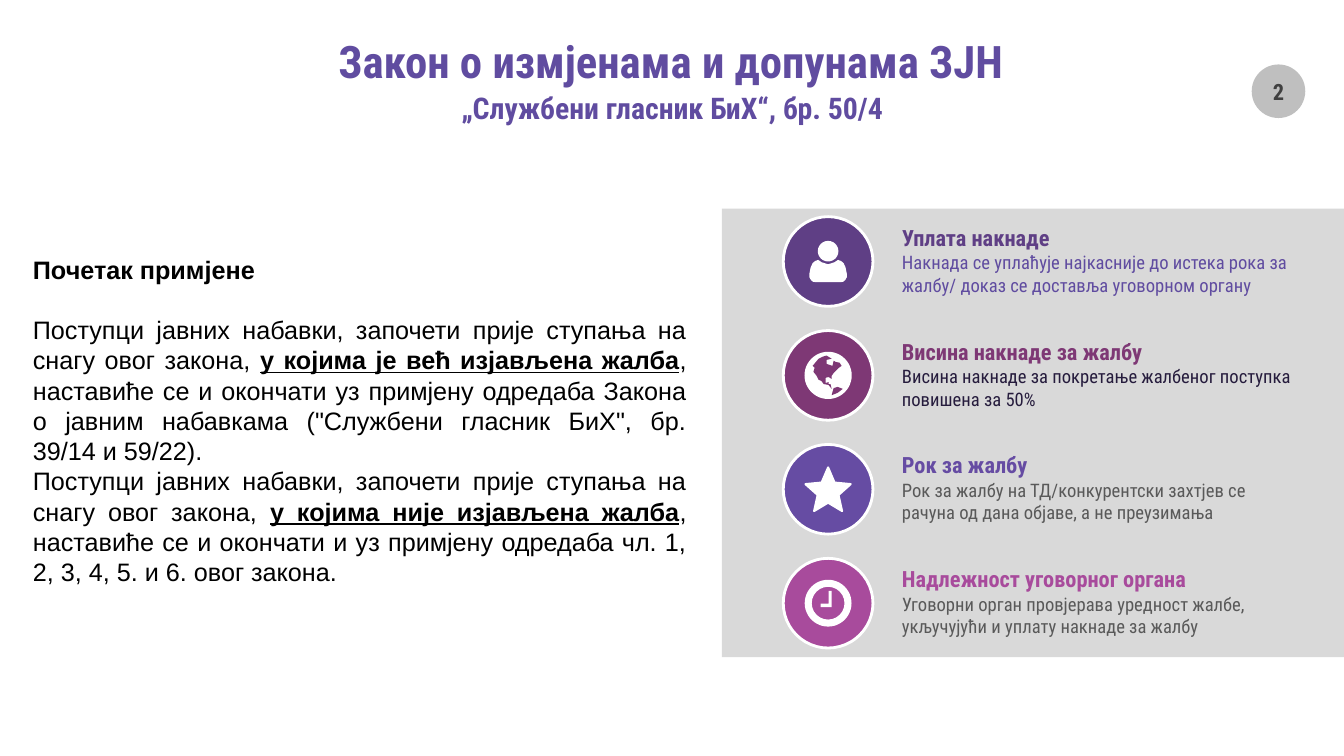
from pptx import Presentation
from pptx.dml.color import RGBColor
from pptx.enum.shapes import MSO_SHAPE
from pptx.enum.text import MSO_ANCHOR, MSO_AUTO_SIZE, PP_ALIGN
from pptx.util import Cm, Pt

HEAD = "Roboto Condensed"
BODY = "Arial"
WHITE = "FFFFFF"
VIOLET = "604CA0"


def color(code):
    return RGBColor.from_string(code)


class Deck:
    """Holds the style and the current slide."""

    def __init__(self):
        self.file = Presentation()
        self.file.slide_width, self.file.slide_height = Cm(33.87), Cm(19.05)
        self.slide = self.file.slides.add_slide(self.file.slide_layouts[5])

    def paint(self, shape, fill, line=None, width=2):
        shape.shadow.inherit = False
        shape.fill.solid()
        shape.fill.fore_color.rgb = color(fill)
        if line:
            shape.line.color.rgb = color(line)
            shape.line.width = Pt(width)
        else:
            shape.line.fill.background()
        return shape

    def form(self, kind, box, fill, line=None, width=2):
        shape = self.slide.shapes.add_shape(kind, *map(Cm, box))
        return self.paint(shape, fill, line, width)

    def round(self, x, y, size, fill, line=None):
        """Circle about a centre."""
        box = (x - size / 2, y - size / 2, size, size)
        return self.form(MSO_SHAPE.OVAL, box, fill, line)

    def outline(self, x, y, points, fill):
        """Polygon about a centre, in hundredths of a centimetre."""
        pen = self.slide.shapes.build_freeform(*points[0], scale=Cm(0.01))
        pen.add_line_segments(points[1:], close=True)
        return self.paint(pen.convert_to_shape(Cm(x), Cm(y)), fill)

    def frame(self, shape, pad=(0, 0), anchor=MSO_ANCHOR.MIDDLE, wrap=True):
        frame = shape.text_frame
        frame.word_wrap = wrap
        frame.auto_size = MSO_AUTO_SIZE.NONE
        frame.vertical_anchor = anchor
        frame.margin_left = frame.margin_right = Cm(pad[0])
        frame.margin_top = frame.margin_bottom = Cm(pad[1])
        return frame

    def run(self, para, text, size, tint, bold=False, font=HEAD, under=False):
        run = para.add_run()
        run.text = text
        run.font.size, run.font.name = Pt(size), font
        run.font.bold, run.font.underline = bold, under
        run.font.color.rgb = color(tint)

    def label(self, shape, text, size, tint, wrap=True):
        """Bold centred text inside a shape."""
        para = self.frame(shape, wrap=wrap).paragraphs[0]
        para.alignment = PP_ALIGN.CENTER
        self.run(para, text, size, tint, True)

    def title(self, box, text):
        shape = self.slide.shapes.title
        shape.left, shape.top, shape.width, shape.height = map(Cm, box)
        self.label(shape, text, 32, VIOLET, wrap=False)

    def box(self, box):
        return self.slide.shapes.add_textbox(*map(Cm, box))

    def note(self, box, text, size, tint, bold=False):
        frame = self.frame(self.box(box), (0.25, 0.13), MSO_ANCHOR.TOP)
        self.run(frame.paragraphs[0], text, size, tint, bold)

    def story(self, box, head, paras):
        frame = self.frame(self.box(box), (0.25, 0.13), MSO_ANCHOR.TOP)
        first = frame.paragraphs[0]
        first.line_spacing = first.space_after = Pt(21.6)
        self.run(first, head, 18, "000000", True, BODY)
        for parts in paras:
            para = frame.add_paragraph()
            para.alignment = PP_ALIGN.JUSTIFY
            para.line_spacing = Pt(21.6)
            for i, text in enumerate(parts):
                key = i == 1
                self.run(para, text, 18, "000000", key, BODY, key)


# Icons, each drawn about the centre of its disc
def person(deck, x, y, tint):
    half = [(0, 7), (16, 2), (25, -4), (33, -1), (39, 4), (44, 15), (47, 30),
            (47, 40), (43, 47), (38, 51), (32, 52)]
    deck.outline(x, y, half + [(-a, b) for a, b in half[:0:-1]], WHITE)
    deck.round(x, y - 0.26, 0.52, WHITE)


def globe(deck, x, y, tint):
    land = [(-39, -24), (-34, -19), (-37, -9), (-29, 1), (-24, 11), (-17, 14),
            (-11, 22), (1, 24), (9, 34), (6, 22), (1, 22), (1, 17), (-6, 19),
            (-6, 6), (1, 4), (9, 9), (9, 1), (14, -6), (22, -14), (27, -19),
            (34, -24), (29, -32), (19, -34), (14, -37), (11, -24), (-4, -29),
            (-4, -39), (9, -42), (-4, -50), (-14, -47), (-24, -42)]
    south = [(37, 34), (24, 29), (14, 32), (11, 42), (9, 50), (24, 44)]
    deck.round(x, y, 1.19, WHITE)
    for part in (land, south):
        deck.outline(x, y, part, tint)


def star(deck, x, y, tint):
    box = (x - 0.57, y - 0.55, 1.14, 1.1)
    shape = deck.form(MSO_SHAPE.STAR_5_POINT, box, WHITE, WHITE, 1.5)
    shape.adjustments[0] = 0.23


def clock(deck, x, y, tint):
    box = (x - 0.59, y - 0.59, 1.18, 1.18)
    deck.form(MSO_SHAPE.DONUT, box, WHITE).adjustments[0] = 0.15
    hands = [(1, -31), (9, -31), (9, 10), (-19, 10), (-19, 1), (1, 1)]
    deck.outline(x, y, hands, WHITE)


ITEMS = [
    (person, "5F3F85", "Уплата накнаде", VIOLET,
     "Накнада се уплаћује најкасније до истека рока за жалбу/ доказ се "
     "доставља уговорном органу"),
    (globe, "7E3875", "Висина накнаде за жалбу", "261C3D",
     "Висина накнаде за покретање жалбеног поступка повишена за 50%"),
    (star, "664CA3", "Рок за жалбу", "595959",
     "Рок за жалбу на ТД/конкурентски захтјев се рачуна од дана објаве, "
     "а не преузимања"),
    (clock, "A84B9C", "Надлежност уговорног органа", "595959",
     "Уговорни орган провјерава уредност жалбе, укључујући и уплату "
     "накнаде за жалбу"),
]
START = ("Поступци јавних набавки, започети прије ступања на снагу овог "
         "закона, ")
PARAS = [
    (START, "у којима је већ изјављена жалба",
     ", наставиће се и окончати уз примјену одредаба Закона о јавним "
     "набавкама (\"Службени гласник БиХ\", бр. 39/14 и 59/22)."),
    (START, "у којима није изјављена жалба",
     ", наставиће се и окончати и уз примјену одредаба чл. 1, 2, 3, 4, 5. "
     "и 6. овог закона."),
]


def main():
    deck = Deck()

    # Heading and page number
    deck.label(deck.round(32.22, 2.3, 1.35, "BFBFBF"), "2", 16, "404040")
    deck.title((8.1, 0.74, 17.63, 1.55), "Закон о измјенама и допунама ЗЈН")
    deck.label(deck.box((11.15, 2.34, 11.58, 0.74)),
               "„Службени гласник БиХ“, бр. 50/4", 21.3, VIOLET)

    # Panel with four items
    deck.form(MSO_SHAPE.RECTANGLE, (18.19, 5.26, 15.68, 11.3), "D9D9D9")
    for i, (icon, tint, head, ink, text) in enumerate(ITEMS):
        x, y = 20.87, 6.59 + i * 2.87
        deck.round(x, y, 2.26, tint, WHITE)
        icon(deck, x, y, tint)
        deck.note((22.48, y - 0.39, 10.44, 1.4), text, 13.3, ink)
        deck.note((22.48, y - 1.08, 10.44, 0.94), head, 16, tint, True)

    # Text on the left
    deck.story((0.58, 6.27, 16.97, 8.71), "Почетак примјене", PARAS)

    deck.file.save("out.pptx")


if __name__ == "__main__":
    main()
